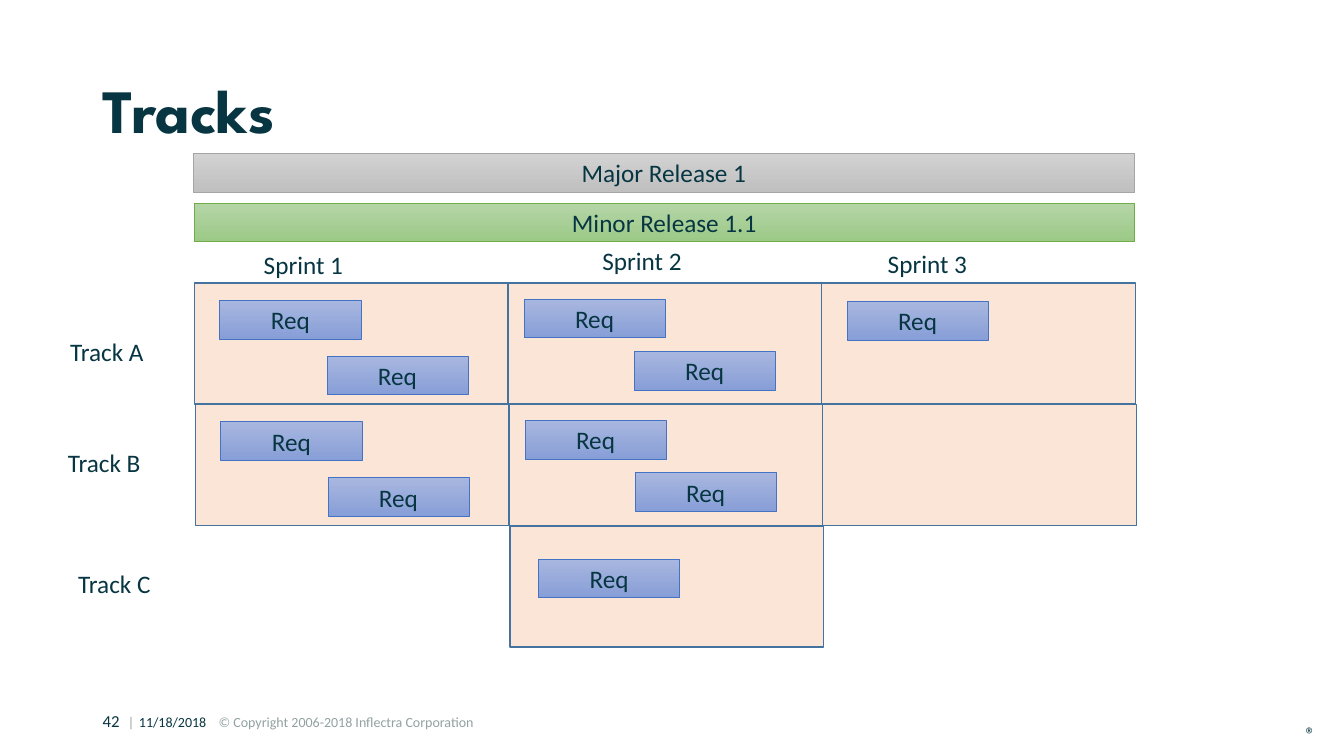
from lxml import etree
from pptx import Presentation
from pptx.dml.color import RGBColor
from pptx.enum.shapes import MSO_SHAPE
from pptx.enum.text import MSO_ANCHOR, PP_ALIGN
from pptx.oxml.ns import qn
from pptx.util import Inches, Pt

RECT = MSO_SHAPE.RECTANGLE
MIDDLE, TOP = MSO_ANCHOR.MIDDLE, MSO_ANCHOR.TOP
LEFT, CENTER = PP_ALIGN.LEFT, PP_ALIGN.CENTER
TITLE_ONLY = 5
COLORS = {
    "ink": "073642", "muted": "93A1A1", "cell": "FBE5D6", "cell_line": "43739E",
    "blue_top": "A8B7DF", "blue_bottom": "889ED7", "blue_line": "4472C4",
    "green_top": "B5D5A7", "green_bottom": "9CC987", "green_line": "70AD47",
    "gray_top": "D2D2D2", "gray_bottom": "C0C0C0", "gray_line": "A5A5A5",
}


class TrackBoard:
    """Draws a release board on a grid of sprint columns and track rows."""

    left, top = 1.93, 2.81
    col_w, row_h, row_shift = 3.11, 1.2, 0.01
    body_font, title_font = "Calibri", "League Spartan"

    def __init__(self, prs):
        self.s = prs.slides.add_slide(prs.slide_layouts[TITLE_ONLY])

    def color(self, name):
        return RGBColor.from_string(COLORS[name])

    def box(self, col, row, cols, rows):
        x = self.left + col * self.col_w + row * self.row_shift
        y = self.top + row * (self.row_h + self.row_shift / 2)
        return [Inches(v) for v in (x, y, cols * self.col_w, rows * self.row_h)]

    def run(self, p, text, size=18, color="ink", font=None, bold=False):
        r = p.add_run()
        r.text = text
        r.font.name = font or self.body_font
        r.font.size = Pt(size)
        r.font.bold = bold
        r.font.color.rgb = self.color(color)

    def title(self, text):
        sp = self.s.shapes.title
        sp.left, sp.top, sp.width, sp.height = map(Inches, (0.92, 0.4, 11.5, 1.45))
        tf = sp.text_frame
        tf.vertical_anchor = MIDDLE
        p = tf.paragraphs[0]
        p.alignment, p.line_spacing = LEFT, 0.9
        self.run(p, text, 44, font=self.title_font, bold=True)

    def text(self, place, runs, inset=True, tabs=()):
        tf = self.s.shapes.add_textbox(*place).text_frame
        tf.word_wrap = True
        tf.vertical_anchor = TOP
        if not inset:
            tf.margin_left = tf.margin_right = tf.margin_top = tf.margin_bottom = 0
        p = tf.paragraphs[0]
        if tabs:
            tab_list = etree.SubElement(p._p.get_or_add_pPr(), qn("a:tabLst"))
            for pos in tabs:
                etree.SubElement(tab_list, qn("a:tab"), pos=str(Inches(pos)), algn="l")
        for r in runs:
            self.run(p, *r)

    def label(self, text, col, row):
        self.text(self.box(col, row, 0.36, 0.33), [(text,)])

    def rect(self, place, line, weight):
        sp = self.s.shapes.add_shape(RECT, *place)
        sp.shadow.inherit = False
        sp.line.color.rgb = self.color(line)
        sp.line.width = Pt(weight)
        return sp

    def cell(self, col, row):
        sp = self.rect(self.box(col, row, 1, 1), "cell_line", 1)
        sp.fill.solid()
        sp.fill.fore_color.rgb = self.color("cell")

    def bar(self, text, hue, col, row, cols):
        sp = self.rect(self.box(col, row, cols, 0.32), f"{hue}_line", 0.5)
        sp.fill.gradient()
        sp.fill.gradient_angle = 270
        for stop, end in zip(sp.fill.gradient_stops, ("top", "bottom")):
            stop.color.rgb = self.color(f"{hue}_{end}")
        tf = sp.text_frame
        tf.vertical_anchor = MIDDLE
        p = tf.paragraphs[0]
        p.alignment = CENTER
        self.run(p, text)


def main():
    prs = Presentation()
    prs.slide_width, prs.slide_height = Inches(13.33), Inches(7.5)
    board = TrackBoard(prs)
    board.title("Tracks")

    board.bar("Major Release 1", "gray", 0, -1.07, 3)
    board.bar("Minor Release 1.1", "green", 0, -0.66, 3)
    for i, (col, row) in enumerate([(0.19, -0.32), (1.27, -0.35), (2.18, -0.33)], 1):
        board.label(f"Sprint {i}", col, row)
    for name, col, row in [("A", -0.43, 0.4), ("B", -0.44, 1.31), ("C", -0.41, 2.31)]:
        board.label(f"Track {name}", col, row)

    first = [(0.08, 0.14), (0.42, 0.6)]
    second = [(0.05, 0.13), (0.4, 0.56)]
    tracks = [
        {0: first, 1: second, 2: [(0.08, 0.15)]},
        {0: first, 1: second, 2: []},
        {1: [(0.09, 0.27)]},
    ]
    for row, sprints in enumerate(tracks):
        for col in sprints:
            board.cell(col, row)
        for col, reqs in sprints.items():
            for dx, dy in reqs:
                board.bar("Req", "blue", col + dx, row + dy, 0.45)

    board.text(
        [Inches(v) for v in (0.92, 7, 7.47, 0.3)],
        [("42", 12), ("\t|\t", 10, "muted"), ("11/18/2018\t", 10),
         ("© Copyright 2006-2018 Inflectra Corporation", 10, "muted")],
        tabs=(0.25, 0.36, 1.15),
    )
    board.text([Inches(v) for v in (12.95, 7.16, 0.18, 0.24)], [("®", 14)], inset=False)
    prs.save("out.pptx")


if __name__ == "__main__":
    main()
